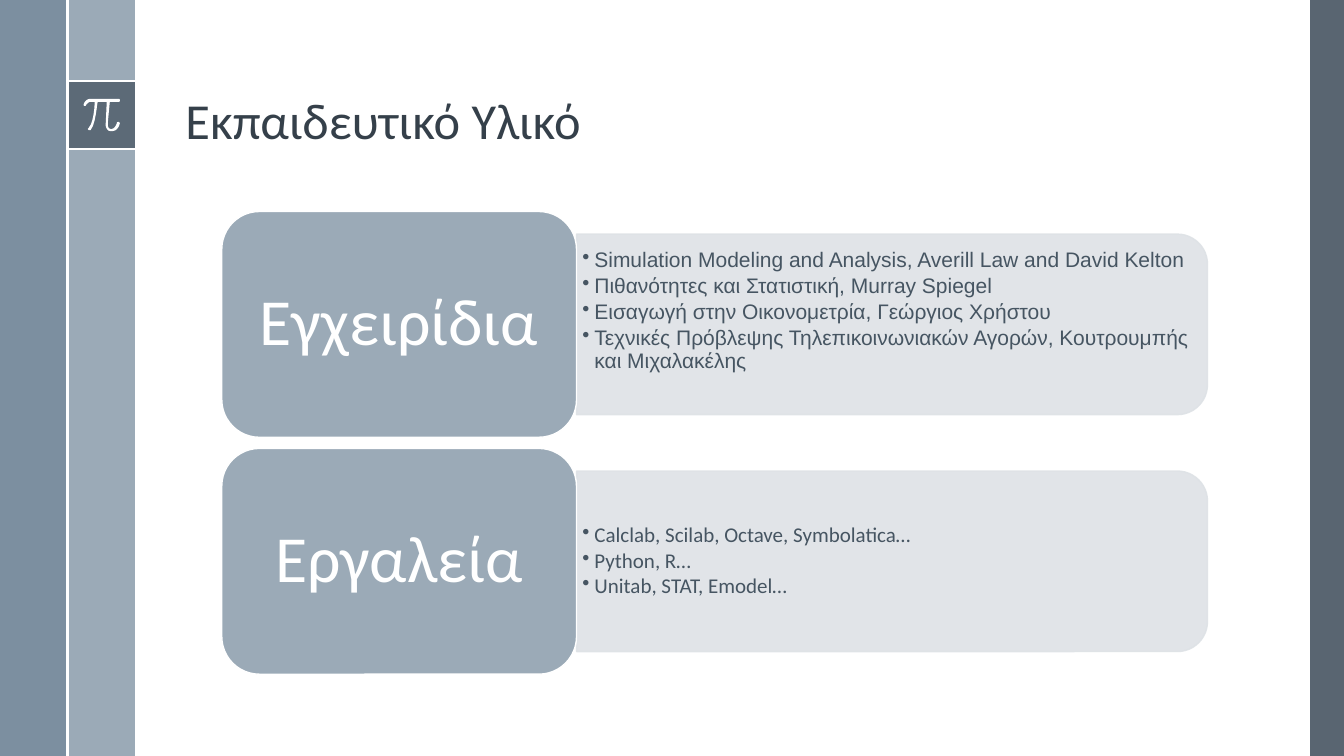
import pptx
import pptx.util
import pptx.dml.color
import pptx.enum.shapes
import pptx.enum.text
import pptx.oxml
import pptx.oxml.ns

Cm, Pt = pptx.util.Cm, pptx.util.Pt
RGB = pptx.dml.color.RGBColor
KIND = pptx.enum.shapes.MSO_SHAPE
ALIGN = pptx.enum.text.PP_ALIGN
ANCHOR = pptx.enum.text.MSO_ANCHOR
qn = pptx.oxml.ns.qn

WHITE = RGB(0xFF, 0xFF, 0xFF)
DARK = RGB(0x47, 0x55, 0x62)
STEEL = RGB(0x6A, 0x80, 0x93)
MIST = RGB(0x9B, 0xAA, 0xB7)
PALE = RGB(0xDE, 0xE2, 0xE6)
INK = RGB(0x35, 0x40, 0x4A)
BODY = RGB(0x46, 0x55, 0x62)

TITLE = "Εκπαιδευτικό Υλικό"
# heading, font of the list, space under the list in cm, list
GROUPS = [
    ("Εγχειρίδια", "Arial", 0.74, [
        "Simulation Modeling and Analysis, Averill Law and David Kelton",
        "Πιθανότητες και Στατιστική, Murray Spiegel",
        "Εισαγωγή στην Οικονομετρία, Γεώργιος Χρήστου",
        "Τεχνικές Πρόβλεψης Τηλεπικοινωνιακών Αγορών, Κουτρουμπής και Μιχαλακέλης",
    ]),
    ("Εργαλεία", "Calibri", 0.08, [
        "Calclab, Scilab, Octave, Symbolatica…",
        "Python, R…",
        "Unitab, STAT, Emodel…",
    ]),
]

WIDE, HIGH = 33.87, 19.05
BAND = 1.7
BADGE = 2.05
# left, top, width, height, colour, opacity in percent
PANELS = [
    (33.02, 0, 0.85, HIGH, DARK, 90),
    (BAND, 0, BAND, HIGH, MIST, 100),
    (0, 0, BAND, HIGH, STEEL, 88),
    (BAND, BADGE, BAND, BAND, DARK, 75),
]
RULES = [
    (BAND, BADGE, 2 * BAND, BADGE),
    (BAND, BADGE + BAND, 2 * BAND, BADGE + BAND),
    (BAND, 0, BAND, HIGH),
]
# Pi sign in hundredths of an inch: pairs are corners, sixes are Bezier curves
PI = [
    (118, 98), (90, 98), (85, 98, 83, 103, 83, 104), (83, 104, 83, 105, 84, 105),
    (85, 105), (85, 105, 87, 101, 90, 101), (94, 101),
    (94, 105, 93, 122, 88, 127), (87, 128, 87, 128, 88, 129), (90, 129),
    (95, 123, 96, 105, 97, 101), (106, 101), (105, 122),
    (105, 122, 104, 126, 107, 129), (108, 130, 109, 130, 110, 130),
    (111, 130, 111, 130, 112, 130), (117, 130, 119, 123, 119, 122),
    (119, 122, 118, 121, 118, 121), (117, 121, 116, 121, 116, 122),
    (116, 122, 115, 127, 111, 128), (110, 128, 109, 128, 108, 127),
    (107, 126, 107, 123, 107, 122), (109, 101), (118, 101),
    (119, 101, 119, 100, 119, 100), (119, 99, 119, 98, 118, 98),
]

CARD_X, CARD_Y, CARD_W, CARD_H, STEP = 5.59, 5.33, 8.94, 5.69, 5.97
BAR_W, BAR_H = 15.9, 4.55
LIST_W, LIST_H = 15.67, 4.11

deck = pptx.Presentation()
deck.slide_width, deck.slide_height = Cm(WIDE), Cm(HIGH)
slide = deck.slides.add_slide(deck.slide_layouts[5])
shapes = slide.shapes


def paint(shape, fill, line=None, solid=100):
    """Set fill, line and opacity in percent."""
    shape.shadow.inherit = False
    shape.fill.solid()
    shape.fill.fore_color.rgb = fill
    if line is None:
        shape.line.fill.background()
    else:
        shape.line.color.rgb = line
        shape.line.width = Pt(1)
    if solid < 100:
        for tint in shape._element.spPr.iter(qn("a:srgbClr")):
            pptx.oxml.ns  # colour element of the fill or line
            alpha = tint.makeelement(qn("a:alpha"), {"val": str(solid * 1000)})
            tint.append(alpha)


def block(kind, left, top, width, height):
    return shapes.add_shape(kind, Cm(left), Cm(top), Cm(width), Cm(height))


def inset(frame, side, top, low):
    frame.word_wrap = True
    frame.vertical_anchor = ANCHOR.MIDDLE
    frame.margin_left = frame.margin_right = Cm(side)
    frame.margin_top, frame.margin_bottom = Cm(top), Cm(low)


def write(para, text, size, face, ink):
    para.line_spacing = 0.9
    run = para.add_run()
    run.text = text
    run.font.size, run.font.name = Pt(size), face
    run.font.color.rgb = ink


def bullet(para):
    props = para._p.get_or_add_pPr()
    props.set("marL", str(Cm(0.3)))
    props.set("indent", str(-Cm(0.3)))
    props.append(props.makeelement(qn("a:buChar"), {"char": "•"}))


def trace(steps, cuts=6):
    """Turn corners and curves into a list of points."""
    spots = [steps[0]]
    for step in steps[1:]:
        if len(step) == 2:
            spots.append(step)
            continue
        knots = [spots[-1], step[:2], step[2:4], step[4:]]
        for cut in range(1, cuts + 1):
            t = cut / cuts
            mix = ((1 - t) ** 3, 3 * t * (1 - t) ** 2, 3 * t * t * (1 - t), t ** 3)
            spots.append(tuple(sum(m * k[i] for m, k in zip(mix, knots))
                               for i in (0, 1)))
    return spots


def frame_page():
    for left, top, width, height, fill, solid in PANELS:
        paint(block(KIND.RECTANGLE, left, top, width, height), fill, solid=solid)
    for ends in RULES:
        rule = shapes.add_connector(pptx.enum.shapes.MSO_CONNECTOR.STRAIGHT,
                                    *[Cm(end) for end in ends])
        rule.line.color.rgb, rule.line.width = WHITE, Pt(1.5)
        props = rule._element.spPr
        props.append(props.makeelement(qn("a:effectLst"), {}))
    grain = 100
    spots = [(x * grain, y * grain) for x, y in trace(PI)]
    pen = shapes.build_freeform(*spots[0], scale=Cm(2.54) / (100 * grain))
    pen.add_line_segments(spots[1:], close=True)
    paint(pen.convert_to_shape(), WHITE)


def add_title():
    title = shapes.title
    title.left, title.top = Cm(4.42), Cm(0.48)
    title.width, title.height = Cm(27.18), Cm(3.45)
    frame = title.text_frame
    frame.auto_size = pptx.enum.text.MSO_AUTO_SIZE.NONE
    frame.vertical_anchor = ANCHOR.BOTTOM
    frame.paragraphs[0].alignment = ALIGN.LEFT
    write(frame.paragraphs[0], TITLE, 36, "Calibri", INK)


def add_group(top, head, face, low, items):
    mid = top + CARD_H / 2
    edge = CARD_X + CARD_W
    # Drawn upright, then turned so that the round corners face right
    bar = block(KIND.ROUND_2_SAME_RECTANGLE, edge + (BAR_W - BAR_H) / 2,
                mid - BAR_W / 2, BAR_H, BAR_W)
    bar.rotation = 90
    paint(bar, PALE, PALE, 90)

    box = shapes.add_textbox(Cm(edge), Cm(mid - LIST_H / 2), Cm(LIST_W), Cm(LIST_H))
    frame = box.text_frame
    inset(frame, 0.15, 0.08, low)
    for rank, item in enumerate(items):
        para = frame.add_paragraph() if rank else frame.paragraphs[0]
        bullet(para)
        para.space_after = Pt(2.25)
        write(para, item, 15, face, BODY)

    card = block(KIND.ROUNDED_RECTANGLE, CARD_X, top, CARD_W, CARD_H)
    paint(card, MIST, WHITE)
    inset(card.text_frame, 0.5, 0.25, 0.25)
    para = card.text_frame.paragraphs[0]
    para.alignment = ALIGN.CENTER
    write(para, head, 47, "Calibri", WHITE)


frame_page()
add_title()
for rank, group in enumerate(GROUPS):
    add_group(CARD_Y + rank * STEP, *group)
deck.save("out.pptx")
